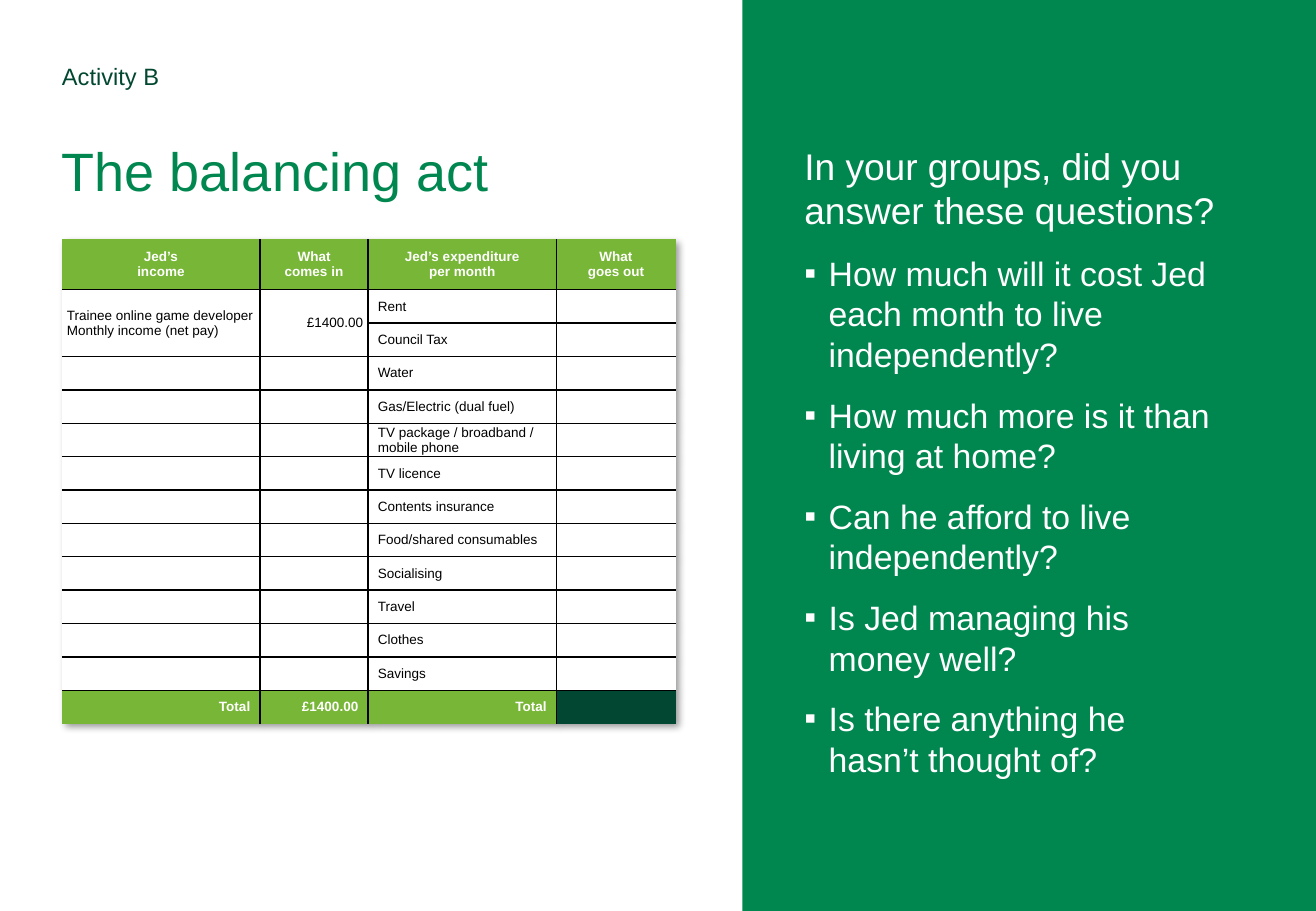
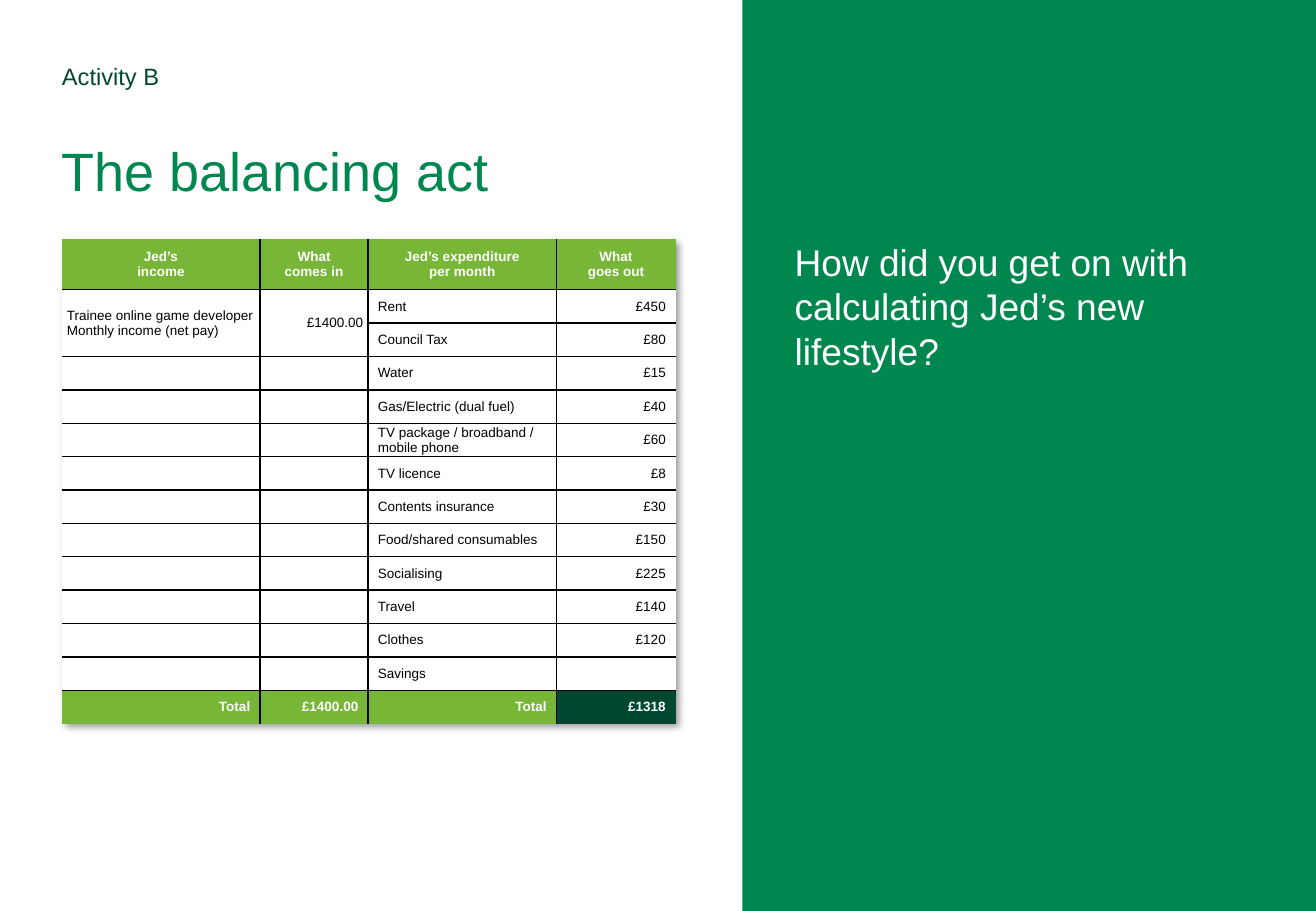
"""Build the two "balancing act" budgeting slides."""
from dataclasses import dataclass
from typing import NamedTuple

from lxml import etree
from pptx import Presentation
from pptx.dml import color
from pptx.enum import shapes, text
from pptx.oxml import ns, parse_xml
from pptx import util as u

EMU_PER_PX = 4572
SLIDE_WIDTH, SLIDE_HEIGHT = 2166, 1500
FONT = "Arial"
WHITE, BLACK = "FFFFFF", "000000"
GREEN, DARK_GREEN, LIME = "00864F", "024731", "78B637"
LEFT, CENTER, RIGHT = text.PP_ALIGN.LEFT, text.PP_ALIGN.CENTER, text.PP_ALIGN.RIGHT
DRAWING = ns.nsdecls("a")

COLUMN_WIDTHS = (326, 178, 310, 196)
HEADER_HEIGHT, ROW_HEIGHT = 83, 55
HEADERS = ("Jed’s\vincome", "What\vcomes in", "Jed’s expenditure\vper month", "What\vgoes out")
INCOME = ("Trainee online game developer\nMonthly income (net pay)", "£1400.00")
EXPENSES = (
    "Rent", "Council Tax", "Water", "Gas/Electric (dual fuel)",
    "TV package / broadband / mobile phone", "TV licence", "Contents insurance",
    "Food/shared consumables", "Socialising", "Travel", "Clothes", "Savings",
)
TOTAL_ROW = len(EXPENSES) + 1


class Insets(NamedTuple):
    """Inner margins in px."""
    left: int = 0
    top: int = 0
    right: int = 0
    bottom: int = 0


class CellLook(NamedTuple):
    """Formatting of one table cell."""
    insets: Insets
    align: text.PP_ALIGN
    fill: str = WHITE
    ink: str = BLACK
    bold: bool = False


@dataclass(frozen=True)
class Activity:
    """What differs from slide to slide."""
    prompt: str
    questions: tuple[str, ...]
    insets: Insets
    costs: tuple[str, ...]
    total: str


ACTIVITIES = (
    Activity(
        "In your groups, did you answer these questions?",
        (
            "How much will it cost Jed each month to live independently?",
            "How much more is it than living at home?",
            "Can he afford to live independently?",
            "Is Jed managing his money well?",
            "Is there anything he hasn’t thought of?",
        ),
        Insets(102, 236, 166, 102),
        ("",) * len(EXPENSES),
        "",
    ),
    Activity(
        "How did you get on with calculating Jed’s new lifestyle?",
        (),
        Insets(86, 394, 78, 102),
        ("£450", "£80", "£15", "£40", "£60", "£8", "£30", "£150", "£225", "£140", "£120", ""),
        "£1318",
    ),
)


def px(length: int) -> u.Emu:
    """Turn px into EMU."""
    return u.Emu(length * EMU_PER_PX)


def rgb(value: str) -> color.RGBColor:
    """Turn a hex string into a colour."""
    return color.RGBColor.from_string(value)


def set_insets(target, insets: Insets) -> None:
    """Set the margins of a text frame or a cell."""
    target.margin_left, target.margin_top = px(insets.left), px(insets.top)
    target.margin_right, target.margin_bottom = px(insets.right), px(insets.bottom)


def format_runs(para, size: int, ink: str, bold: bool = False) -> None:
    """Give every run of a paragraph the same font."""
    for span in para.runs:
        span.font.name = FONT
        span.font.size = u.Pt(size)
        span.font.bold = bold
        span.font.color.rgb = rgb(ink)


def add_title(page) -> None:
    """Place the activity label and the title in the title placeholder."""
    box = page.shapes.title
    box.left, box.top, box.width, box.height = px(102), px(102), px(786), px(256)
    frame = box.text_frame
    frame.text = "Activity B\nThe balancing act"
    frame.word_wrap = True
    frame.auto_size = text.MSO_AUTO_SIZE.NONE
    frame.vertical_anchor = text.MSO_ANCHOR.TOP
    set_insets(frame, Insets())
    label, title = frame.paragraphs
    for para, size, ink, gap in ((label, 14, DARK_GREEN, 0), (title, 32, GREEN, 28)):
        para.alignment = LEFT
        para.space_before = u.Pt(gap)
        format_runs(para, size, ink)


def add_bullet(para) -> None:
    """Give a paragraph a square bullet with a hanging indent."""
    properties = para._p.get_or_add_pPr()
    properties.set("marL", str(px(40)))
    properties.set("indent", str(px(-40)))
    properties.append(parse_xml(f'<a:buFont {DRAWING} typeface="{FONT}"/>'))
    properties.append(parse_xml(f'<a:buChar {DRAWING} char="▪"/>'))


def add_panel(page, activity: Activity) -> None:
    """Draw the green panel with its prompt and questions."""
    left = 1222
    panel = page.shapes.add_shape(
        shapes.MSO_SHAPE.RECTANGLE, px(left), 0, px(SLIDE_WIDTH - left), px(SLIDE_HEIGHT))
    panel.shadow.inherit = False
    panel.fill.solid()
    panel.fill.fore_color.rgb = rgb(GREEN)
    panel.line.fill.background()
    frame = panel.text_frame
    frame.text = "\n".join((activity.prompt, *activity.questions))
    frame.word_wrap = True
    frame.vertical_anchor = text.MSO_ANCHOR.TOP
    set_insets(frame, activity.insets)
    for index, para in enumerate(frame.paragraphs):
        para.alignment = LEFT
        para.space_after = u.Pt(12)
        if index:
            add_bullet(para)
        format_runs(para, 20 if index else 22, WHITE)


def cell_look(row: int, column: int) -> CellLook:
    """Choose the formatting from the place in the table."""
    if row == 0:
        return CellLook(Insets(0, 8, 0, 8), CENTER, LIME, WHITE, True)
    if row == TOTAL_ROW:
        fill = DARK_GREEN if column == 3 else LIME
        return CellLook(Insets(16, 8, 16, 8), RIGHT, fill, WHITE, True)
    side = 8 if column < 2 else 16
    return CellLook(Insets(side, 0, side, 0), RIGHT if column % 2 else LEFT)


def set_borders(cell, row: int, column: int) -> None:
    """Rule the inner edges of the table and leave its outline bare."""
    ruled = {
        "lnL": column > 0,
        "lnR": column < len(COLUMN_WIDTHS) - 1,
        "lnT": row > 0,
        "lnB": row < TOTAL_ROW,
    }
    properties = cell._tc.get_or_add_tcPr()
    for index, (edge, visible) in enumerate(ruled.items()):
        paint = f'<a:solidFill><a:srgbClr val="{BLACK}"/></a:solidFill>' if visible else "<a:noFill/>"
        properties.insert(index, parse_xml(
            f'<a:{edge} {DRAWING} w="{u.Pt(1)}">{paint}</a:{edge}>'))


def fill_cell(cell, words: str, row: int, column: int) -> None:
    """Write and format one cell."""
    look = cell_look(row, column)
    cell.text_frame.text = words
    cell.vertical_anchor = text.MSO_ANCHOR.MIDDLE
    set_insets(cell, look.insets)
    cell.fill.solid()
    cell.fill.fore_color.rgb = rgb(look.fill)
    set_borders(cell, row, column)
    for para in cell.text_frame.paragraphs:
        para.alignment = look.align
        format_runs(para, 8, look.ink, look.bold)
        if not para.runs:
            etree.SubElement(para._p, ns.qn("a:endParaRPr")).set("sz", "800")


def add_shadow(table) -> None:
    """Put a soft shadow below and to the right of the table."""
    table._tbl.tblPr.insert(0, parse_xml(
        f'<a:effectLst {DRAWING}><a:outerShdw blurRad="{u.Pt(4)}" dist="{u.Pt(3)}" '
        f'dir="2700000" algn="tl" rotWithShape="0"><a:srgbClr val="{BLACK}">'
        '<a:alpha val="40000"/></a:srgbClr></a:outerShdw></a:effectLst>'))


def add_budget(page, activity: Activity) -> None:
    """Add the table of income and expenditure."""
    rows = [HEADERS]
    for index, (expense, cost) in enumerate(zip(EXPENSES, activity.costs)):
        rows.append((*(("", "") if index else INCOME), expense, cost))
    rows.append(("Total", INCOME[1], "Total", activity.total))
    height = HEADER_HEIGHT + TOTAL_ROW * ROW_HEIGHT
    table = page.shapes.add_table(
        len(rows), len(COLUMN_WIDTHS), px(102), px(394), px(sum(COLUMN_WIDTHS)), px(height)).table
    table.first_row = table.horz_banding = False
    for column, width in zip(table.columns, COLUMN_WIDTHS):
        column.width = px(width)
    for index, row in enumerate(table.rows):
        row.height = px(ROW_HEIGHT if index else HEADER_HEIGHT)
    for row, entries in enumerate(rows):
        for column, words in enumerate(entries):
            fill_cell(table.cell(row, column), words, row, column)
    for column in range(2):
        table.cell(1, column).merge(table.cell(2, column))
    add_shadow(table)


def main() -> None:
    """Build and save the deck."""
    deck = Presentation()
    deck.slide_width, deck.slide_height = px(SLIDE_WIDTH), px(SLIDE_HEIGHT)
    title_only = deck.slide_layouts.get_by_name("Title Only")
    for activity in ACTIVITIES:
        page = deck.slides.add_slide(title_only)
        add_title(page)
        add_panel(page, activity)
        add_budget(page, activity)
    deck.save("out.pptx")


if __name__ == "__main__":
    main()
